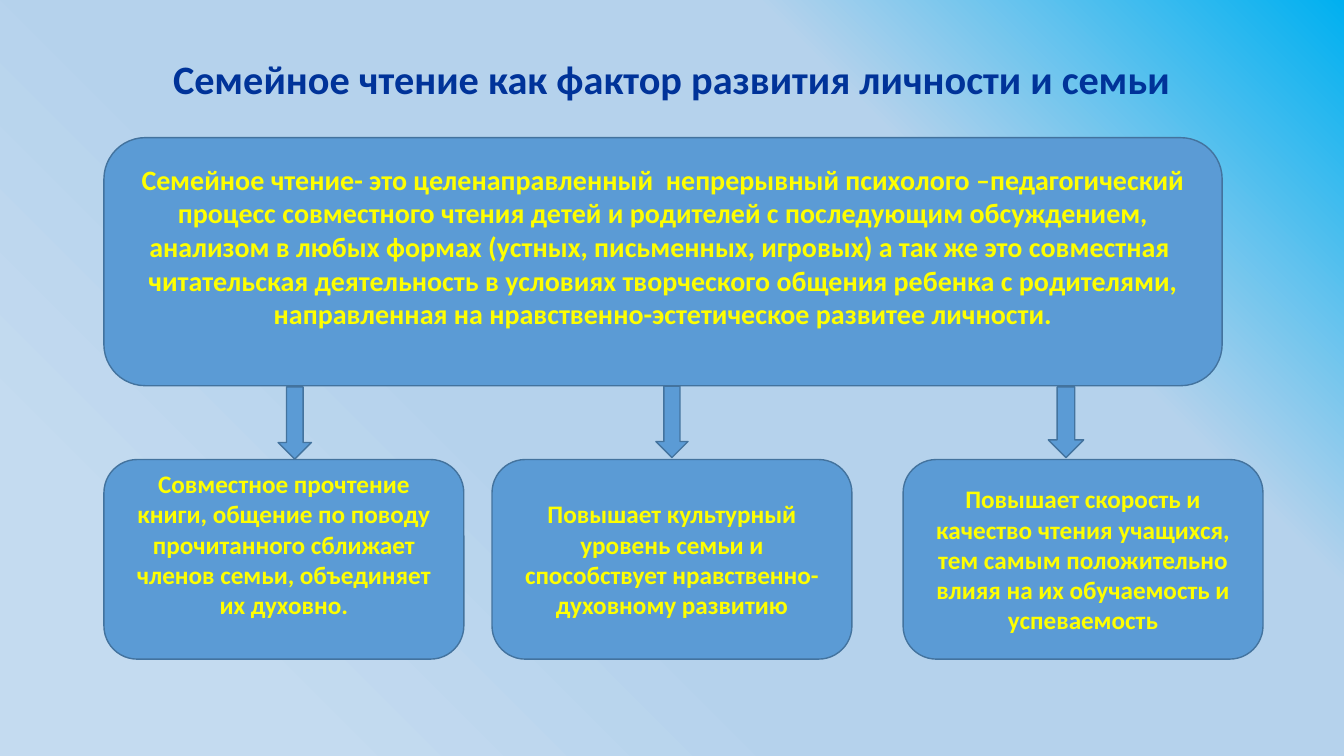
from lxml.etree import SubElement
from pptx import Presentation
from pptx.dml.color import RGBColor
from pptx.enum.shapes import MSO_SHAPE
from pptx.enum.text import MSO_ANCHOR, PP_ALIGN
from pptx.oxml.ns import qn
from pptx.util import Cm, Pt

TITLE = "Семейное чтение как фактор развития личности и семьи"
DEFINITION = (
    "Семейное чтение- это целенаправленный  непрерывный психолого –педагогический "
    "процесс совместного чтения детей и родителей с последующим обсуждением, "
    "анализом в любых формах (устных, письменных, игровых) а так же это совместная  "
    "читательская деятельность в условиях творческого общения ребенка с родителями, "
    "направленная на нравственно-эстетическое развитее личности."
)
# left, bottom inset, text
EFFECTS = [
    (2.62, 0.9, "Совместное прочтение книги, общение по поводу прочитанного "
                "сближает членов семьи, объединяет их духовно."),
    (12.4, 0.13, "Повышает культурный уровень семьи и способствует "
                 "нравственно-духовному развитию"),
    (22.76, 0.13, "Повышает скорость и качество чтения учащихся, тем самым "
                  "положительно влияя на их обучаемость и успеваемость"),
]
# left, top, width, height
ARROWS = [
    (7.01, 9.75, 0.84, 1.82),
    (16.53, 9.73, 0.81, 1.8),
    (26.42, 9.75, 0.89, 1.78),
]
BACKGROUND_STOPS = [(0, "00B0F0"), (28, "B5D2EC"), (61, "B5D2EC"), (85, "C4DBF0")]


def rgb(value):
    return RGBColor.from_string(value)


def set_background(s):
    fill = s.background.fill
    fill.gradient()
    fill.gradient_angle = 225  # counter-clockwise: top right to bottom left
    stops = s.background._cSld.find(".//" + qn("a:gsLst"))
    for stop in list(stops):
        stops.remove(stop)
    for percent, color in BACKGROUND_STOPS:
        stop = SubElement(stops, qn("a:gs"), pos=str(percent * 1000))
        SubElement(stop, qn("a:srgbClr"), val=color)


def write(sp, text, size, color):
    tf = sp.text_frame
    tf.word_wrap = True
    tf.vertical_anchor = MSO_ANCHOR.MIDDLE
    p = tf.paragraphs[0]
    p.text = text
    p.alignment = PP_ALIGN.CENTER
    p.font.name = "Calibri"
    p.font.size = Pt(size)
    p.font.bold = True
    p.font.color.rgb = rgb(color)
    return p


def add_title(s):
    sp = s.shapes.add_textbox(Cm(2.33), Cm(1.02), Cm(29.21), Cm(2.06))
    write(sp, TITLE, 28.8, "003399").line_spacing = 0.9


def add_blue_shape(s, kind, left, top, width, height):
    sp = s.shapes.add_shape(kind, Cm(left), Cm(top), Cm(width), Cm(height))
    sp.shadow.inherit = False
    sp.fill.solid()
    sp.fill.fore_color.rgb = rgb("5B9BD5")
    sp.line.color.rgb = rgb("43739E")
    sp.line.width = Pt(1)
    return sp


def add_box(s, left, top, width, height, text, size, bottom_inset):
    sp = add_blue_shape(s, MSO_SHAPE.FLOWCHART_ALTERNATE_PROCESS,
                        left, top, width, height)
    write(sp, text, size, "FFFF00")
    sp.text_frame.margin_bottom = Cm(bottom_inset)


def main():
    prs = Presentation()
    prs.slide_width, prs.slide_height = Cm(33.87), Cm(19.05)
    s = prs.slides.add_slide(prs.slide_layouts[6])
    set_background(s)
    add_title(s)
    add_box(s, 2.62, 3.47, 28.18, 6.25, DEFINITION, 20, 0.9)
    for left, bottom_inset, text in EFFECTS:
        add_box(s, left, 11.58, 9.07, 5.03, text, 18, bottom_inset)
    for arrow in ARROWS:
        add_blue_shape(s, MSO_SHAPE.DOWN_ARROW, *arrow)
    prs.save("out.pptx")


if __name__ == "__main__":
    main()
